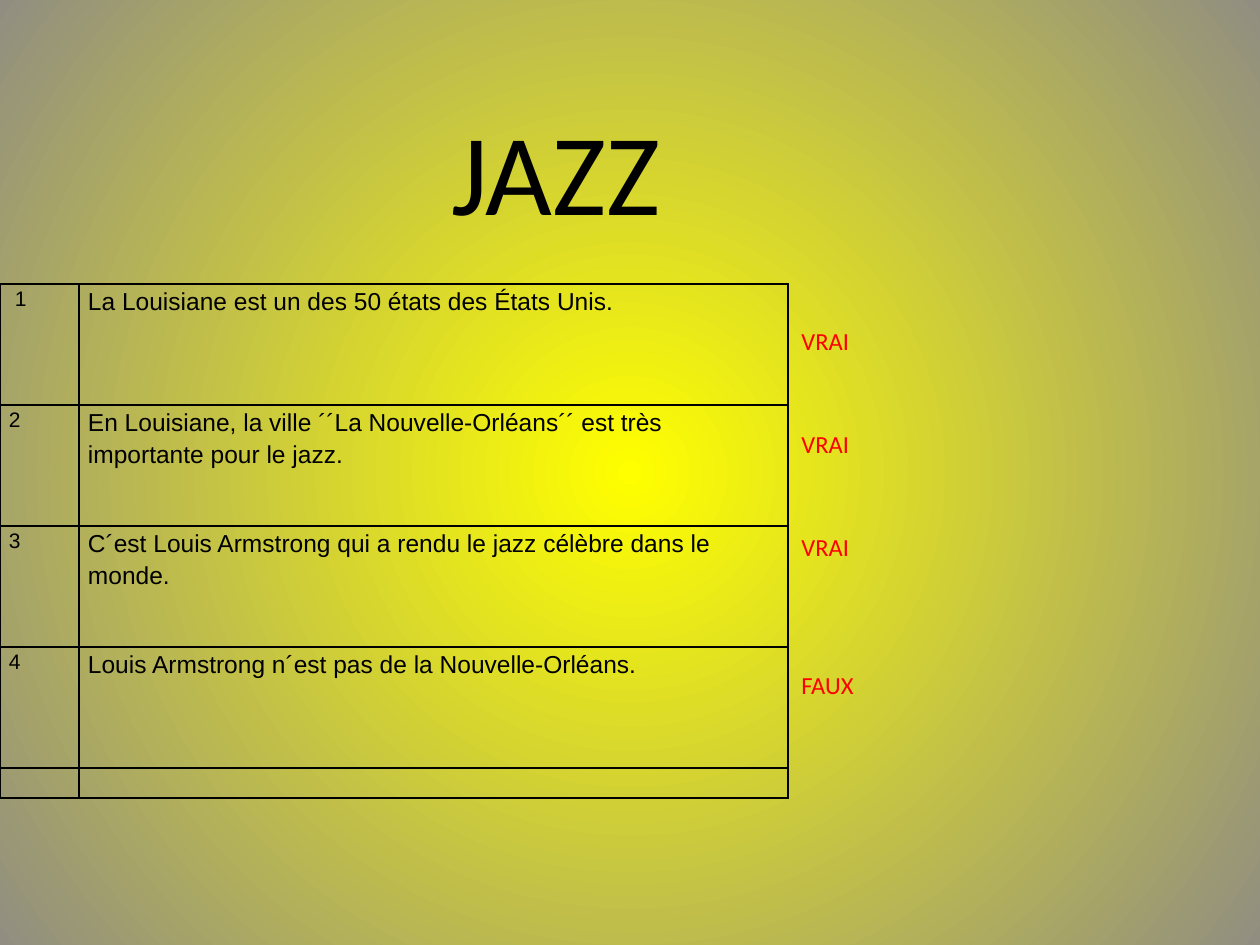
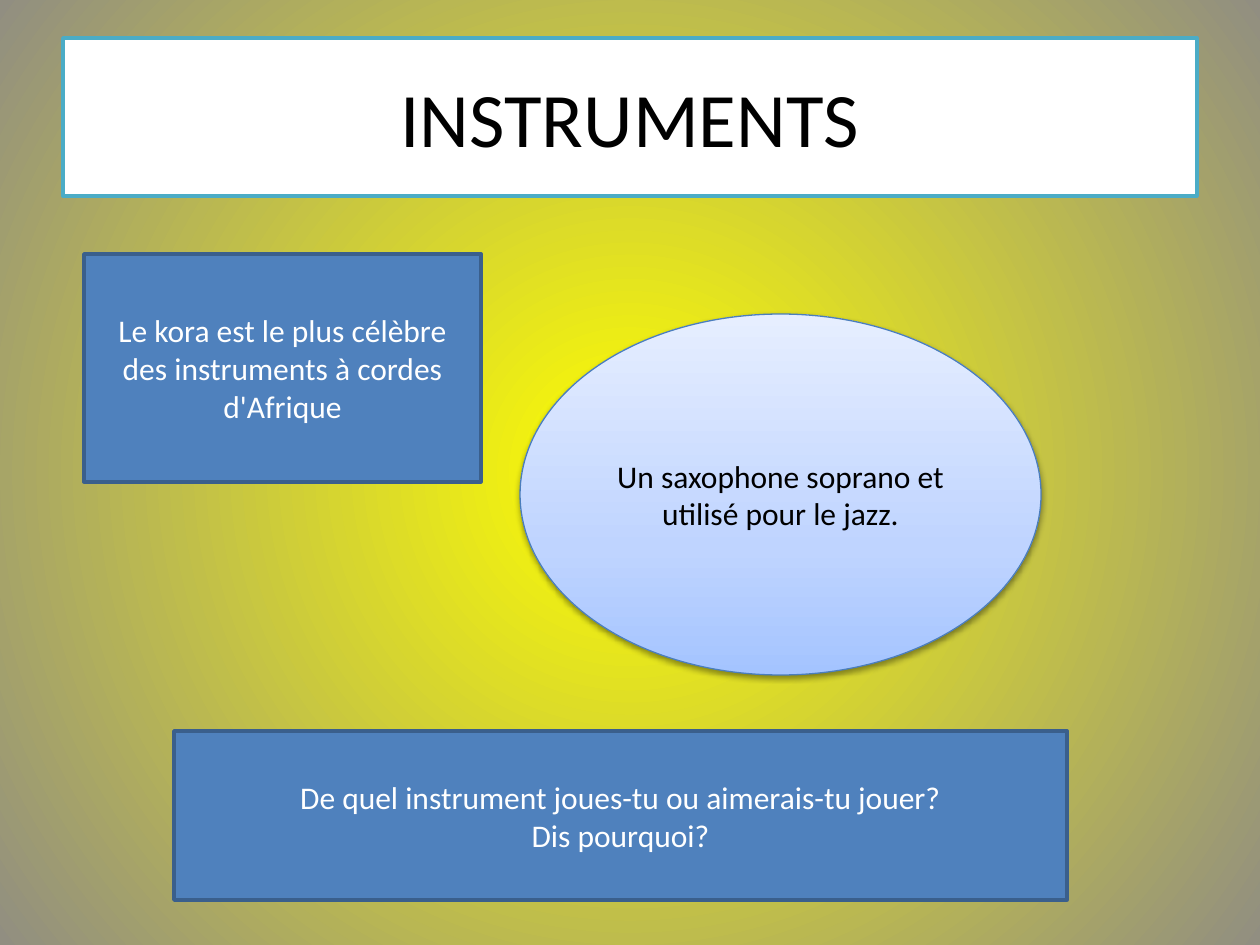
from pptx import Presentation
from pptx.dml.color import RGBColor as Rgb
from pptx.enum.shapes import MSO_SHAPE as Kind
from pptx.enum.text import MSO_ANCHOR as Anchor, PP_ALIGN as Align
from pptx.oxml import parse_xml
from pptx.oxml.ns import nsdecls, qn
from pptx.util import Emu, Pt

INK = {
    "black": "000000", "white": "FFFFFF", "red": "FF0000",
    "sun": "FFFF00", "dusk": "918E81",
    "blue": "4F81BD", "navy": "3A5F8C", "aqua": "4BACC6", "rim": "4B7EBC",
    "low": "A4C4FF", "mid": "BFD4FF", "high": "E6EEFF",
}
GLOW = '<a:path path="circle"><a:fillToRect l="50000" t="50000" r="50000" b="50000"/></a:path>'
RISE = '<a:lin ang="16200000" scaled="0"/>'

CLAIMS = [
    ("\N{NO-BREAK SPACE}1", "La Louisiane est un des 50 états des États Unis."),
    ("2", "En Louisiane, la ville ´´La Nouvelle-Orléans´´ est très importante pour le jazz."),
    ("3", "C´est Louis Armstrong qui a rendu le jazz célèbre dans le monde."),
    ("4", "Louis Armstrong n´est pas de la Nouvelle-Orléans."),
    ("", ""),
]
REPLIES = [("VRAI", 0), ("VRAI", 42), ("VRAI", 42), ("FAUX", 62)]


def px(count):
    return Emu(round(count * 914400 / 126))


def rgb(name):
    return Rgb.from_string(INK[name])


def xml(tag, body, attrs=""):
    return parse_xml(f"<a:{tag} {nsdecls('a')} {attrs}>{body}</a:{tag}>")


def blend(owner, fill, stops, course):
    """Fill the owner with a gradient of (percent, colour) stops."""
    fill.gradient()
    old = owner.find(".//" + qn("a:gradFill"))
    marks = "".join(
        f'<a:gs pos="{pos * 1000}"><a:srgbClr val="{INK[name]}"/></a:gs>'
        for pos, name in stops)
    new = xml("gradFill", f"<a:gsLst>{marks}</a:gsLst>{course}", 'rotWithShape="1"')
    old.getparent().replace(old, new)


def put(para, text, size, ink, font="Calibri"):
    run = para.add_run()
    run.text = text
    run.font.size = Pt(size)
    run.font.name = font
    run.font.color.rgb = rgb(ink)


def write(frame, lines, size, ink):
    """Set centred lines in the middle of a frame."""
    frame.word_wrap = True
    frame.vertical_anchor = Anchor.MIDDLE
    for num, text in enumerate(lines):
        para = frame.add_paragraph() if num else frame.paragraphs[0]
        para.alignment = Align.CENTER
        put(para, text, size, ink)


def text_box(slide, place):
    frame = slide.shapes.add_textbox(*map(px, place)).text_frame
    frame.word_wrap = True
    return frame


def panel(slide, place, lines, fill="blue", edge="navy", size=18, ink="white",
          kind=Kind.RECTANGLE, width=2):
    shape = slide.shapes.add_shape(kind, *map(px, place))
    shape.shadow.inherit = False
    shape.fill.solid()
    shape.fill.fore_color.rgb = rgb(fill)
    shape.line.color.rgb = rgb(edge)
    shape.line.width = Pt(width)
    write(shape.text_frame, lines, size, ink)
    return shape


def bubble(slide, place, lines):
    """Draw a shaded oval with a soft shadow."""
    oval = panel(slide, place, lines, "mid", "rim", ink="black",
                 kind=Kind.OVAL, width=0.75)
    props = oval.element.spPr
    blend(props, oval.fill, [(0, "low"), (35, "mid"), (100, "high")], RISE)
    props.find(qn("a:effectLst")).append(xml(
        "outerShdw",
        f'<a:srgbClr val="{INK["black"]}"><a:alpha val="38000"/></a:srgbClr>',
        'blurRad="40000" dist="20000" dir="5400000" rotWithShape="0"'))


def frame_cell(cell):
    """Clear the fill and rule all four sides."""
    cell.fill.background()
    props = cell._tc.get_or_add_tcPr()
    for pos, side in enumerate(("lnL", "lnR", "lnT", "lnB")):
        body = f'<a:solidFill><a:srgbClr val="{INK["black"]}"/></a:solidFill>'
        props.insert(pos, xml(side, body, 'w="12700"'))


def grid(slide, place, cols, rows, data):
    table = slide.shapes.add_table(len(rows), len(cols), *map(px, place)).table
    table.first_row = table.horz_banding = False
    for col, width in zip(table.columns, cols):
        col.width = px(width)
    for row, height, texts in zip(table.rows, rows, data):
        row.height = px(height)
        for cell, text, size in zip(row.cells, texts, (12, 14)):
            frame_cell(cell)
            cell.margin_left = cell.margin_right = px(9)
            cell.margin_top = cell.margin_bottom = 0
            para = cell.text_frame.paragraphs[0]
            if text:
                para.line_spacing = 1.15
                put(para, text, size, "black", "Arial")
            else:
                para._p.append(xml("endParaRPr", "", 'sz="1200"'))


def replies(slide, place):
    frame = text_box(slide, place)
    frame.margin_top = px(42)
    for num, (text, gap) in enumerate(REPLIES):
        para = frame.add_paragraph() if num else frame.paragraphs[0]
        para.space_before = Pt(gap)
        put(para, text, 14, "red")


def jazz(slide):
    write(text_box(slide, (273, 55, 566, 228)), ["JAZZ"], 66, "black")
    grid(slide, (0, 284, 788, 515), (79, 709), [121] * 4 + [30], CLAIMS)
    replies(slide, (789, 284, 179, 611))


def tools(slide):
    panel(slide, (63, 38, 1134, 158), ["INSTRUMENTS"], "white", "aqua", 44, "black")
    panel(slide, (84, 254, 397, 228),
          ["Le kora est le plus célèbre des instruments à cordes d'Afrique"])
    bubble(slide, (520, 314, 521, 361),
           ["Un saxophone soprano et utilisé pour le jazz."])
    panel(slide, (174, 731, 893, 169),
          ["De quel instrument joues-tu ou aimerais-tu jouer?", "Dis pourquoi?"])


def main():
    deck = Presentation()
    deck.slide_width, deck.slide_height = px(1260), px(945)
    base = deck.slide_master
    blend(base.element, base.background.fill, [(0, "sun"), (100, "dusk")], GLOW)
    for build in (jazz, tools):
        build(deck.slides.add_slide(deck.slide_layouts[6]))
    deck.save("out.pptx")


if __name__ == "__main__":
    main()
